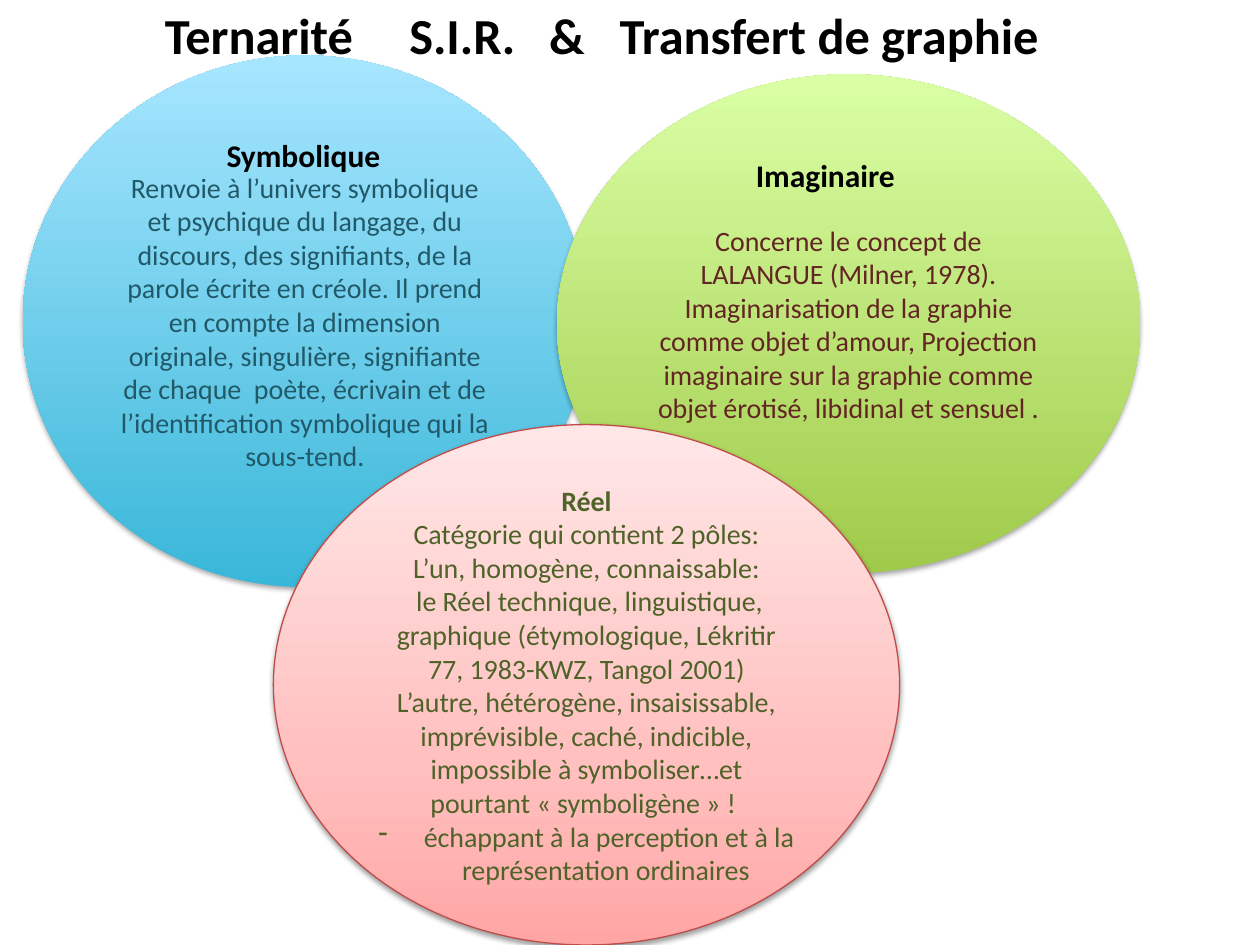
from copy import deepcopy

from lxml import etree
from pptx import Presentation
from pptx.dml.color import RGBColor
from pptx.enum.shapes import MSO_SHAPE
from pptx.enum.text import MSO_ANCHOR, PP_ALIGN
from pptx.oxml.ns import qn
from pptx.util import Inches, Pt

OVAL = MSO_SHAPE.OVAL
MIDDLE = MSO_ANCHOR.MIDDLE
CENTER = PP_ALIGN.CENTER
FONT = "Calibri"

BLACK = RGBColor(0x00, 0x00, 0x00)
TEAL_TEXT = RGBColor(0x21, 0x59, 0x68)
MAROON_TEXT = RGBColor(0x63, 0x25, 0x23)
OLIVE_TEXT = RGBColor(0x4F, 0x62, 0x28)
BLUE_DARK = RGBColor(0x39, 0xB7, 0xD8)
BLUE_LIGHT = RGBColor(0xA7, 0xE6, 0xFF)
GREEN_DARK = RGBColor(0xA0, 0xCA, 0x4A)
GREEN_LIGHT = RGBColor(0xDA, 0xFF, 0xA5)
RED_DARK = RGBColor(0xFF, 0xA6, 0xA5)
RED_MIDDLE = RGBColor(0xFF, 0xC0, 0xBF)
RED_LIGHT = RGBColor(0xFF, 0xE7, 0xE7)
RED_LINE = RGBColor(0xBF, 0x4C, 0x48)


def add_text(para, text, **font_format):
    span = para.add_run()
    span.text = text
    span.font.name = FONT
    span.font.color.rgb = font_format.pop("color")
    for name, value in font_format.items():
        setattr(span.font, name, value)


def style_circle(circle, stops, line_color, shadow):
    """Apply a bottom-to-top gradient, an optional outline and a soft shadow below."""
    circle.fill.gradient()
    circle.fill.gradient_angle = 90
    stop_list = circle._element.spPr.find(qn("a:gradFill")).find(qn("a:gsLst"))
    while len(stop_list) < len(stops):
        stop_list.append(deepcopy(stop_list[-1]))
    for stop, (position, color) in zip(circle.fill.gradient_stops, stops):
        stop.position = position
        stop.color.rgb = color

    if line_color is None:
        circle.line.fill.background()
    else:
        circle.line.color.rgb = line_color
        circle.line.width = Pt(0.75)

    circle.shadow.inherit = False
    distance, opacity = shadow
    effects = circle._element.spPr.find(qn("a:effectLst"))
    outer = etree.SubElement(effects, qn("a:outerShdw"), blurRad=str(Pt(3.1)),
                             dist=str(Pt(distance)), dir="5400000", rotWithShape="0")
    tint = etree.SubElement(outer, qn("a:srgbClr"), val="000000")
    etree.SubElement(tint, qn("a:alpha"), val=str(opacity * 1000))


deck = Presentation()
deck.slide_width = Inches(10)
deck.slide_height = Inches(7.5)
page = deck.slides.add_slide(deck.slide_layouts[6])

# Title, its parts set apart by tab stops
box = page.shapes.add_textbox(Inches(1.21), Inches(0), Inches(7.84), Inches(0.55))
box.text_frame.word_wrap = True
box.text_frame.vertical_anchor = MIDDLE
para = box.text_frame.paragraphs[0]
add_text(para, "Ternarité\tS.I.R.\t&\tTransfert de graphie",
         size=Pt(28.8), bold=True, color=BLACK)
tab_list = etree.SubElement(para._p.get_or_add_pPr(), qn("a:tabLst"))
for position in (1.94, 3.05, 3.61):
    etree.SubElement(tab_list, qn("a:tab"), pos=str(Inches(position)), algn="l")

# The three overlapping circles, from back to front
circles = [
    {
        "place": (0.18, 0.44, 4.48, 4.22),
        "stops": [(0, BLUE_DARK), (1, BLUE_LIGHT)],
        "line": None,
        "shadow": (1.8, 35),
        "color": TEAL_TEXT,
        "heading": ("Symbolique", 1.7, 1.03, 1.43),
        "paragraphs": [
            "Renvoie à l’univers symbolique et psychique du langage, du discours, "
            "des signifiants, de la parole écrite en créole. Il prend en compte la "
            "dimension originale, singulière, signifiante de chaque  poète, écrivain "
            "et de l’identification symbolique qui la sous-tend."],
    },
    {
        "place": (4.42, 0.59, 4.63, 3.96),
        "stops": [(0, GREEN_DARK), (1, GREEN_LIGHT)],
        "line": None,
        "shadow": (1.8, 35),
        "color": MAROON_TEXT,
        "heading": ("Imaginaire", 5.9, 1.19, 1.32),
        "paragraphs": [
            "Concerne le concept de LALANGUE (Milner, 1978). Imaginarisation de la "
            "graphie comme objet d’amour, Projection imaginaire sur la graphie comme "
            "objet érotisé, libidinal et sensuel ."],
    },
    {
        "place": (2.17, 3.37, 4.97, 4.13),
        "stops": [(0, RED_DARK), (0.35, RED_MIDDLE), (1, RED_LIGHT)],
        "line": RED_LINE,
        "shadow": (1.6, 38),
        "color": OLIVE_TEXT,
        "heading": None,
        "paragraphs": [
            "Réel",
            "Catégorie qui contient 2 pôles:",
            "L’un, homogène, connaissable:",
            " le Réel technique, linguistique, graphique (étymologique, Lékritir 77, "
            "1983-KWZ, Tangol 2001)",
            "L’autre, hétérogène, insaisissable, imprévisible, caché, indicible, "
            "impossible à symboliser…et pourtant « symboligène » ! ",
            " échappant à la perception et à la représentation ordinaires"],
    },
]

for item in circles:
    circle = page.shapes.add_shape(OVAL, *map(Inches, item["place"]))
    style_circle(circle, item["stops"], item["line"], item["shadow"])
    frame = circle.text_frame
    frame.word_wrap = True
    frame.vertical_anchor = MIDDLE
    for index, text in enumerate(item["paragraphs"]):
        para = frame.paragraphs[0] if index == 0 else frame.add_paragraph()
        para.alignment = CENTER
        add_text(para, text, size=Pt(16), bold=text == "Réel", color=item["color"])

    if item["heading"]:
        text, left, top, width = item["heading"]
        box = page.shapes.add_textbox(*map(Inches, (left, top, width, 0.4)))
        box.text_frame.word_wrap = False
        add_text(box.text_frame.paragraphs[0], text, size=Pt(18), bold=True, color=BLACK)

# Dash bullet on the closing paragraph of the front circle
properties = para._p.get_or_add_pPr()
properties.set("marL", str(Inches(0.31)))
properties.set("indent", str(Inches(-0.31)))
etree.SubElement(properties, qn("a:buChar"), char="-")

deck.save("out.pptx")
